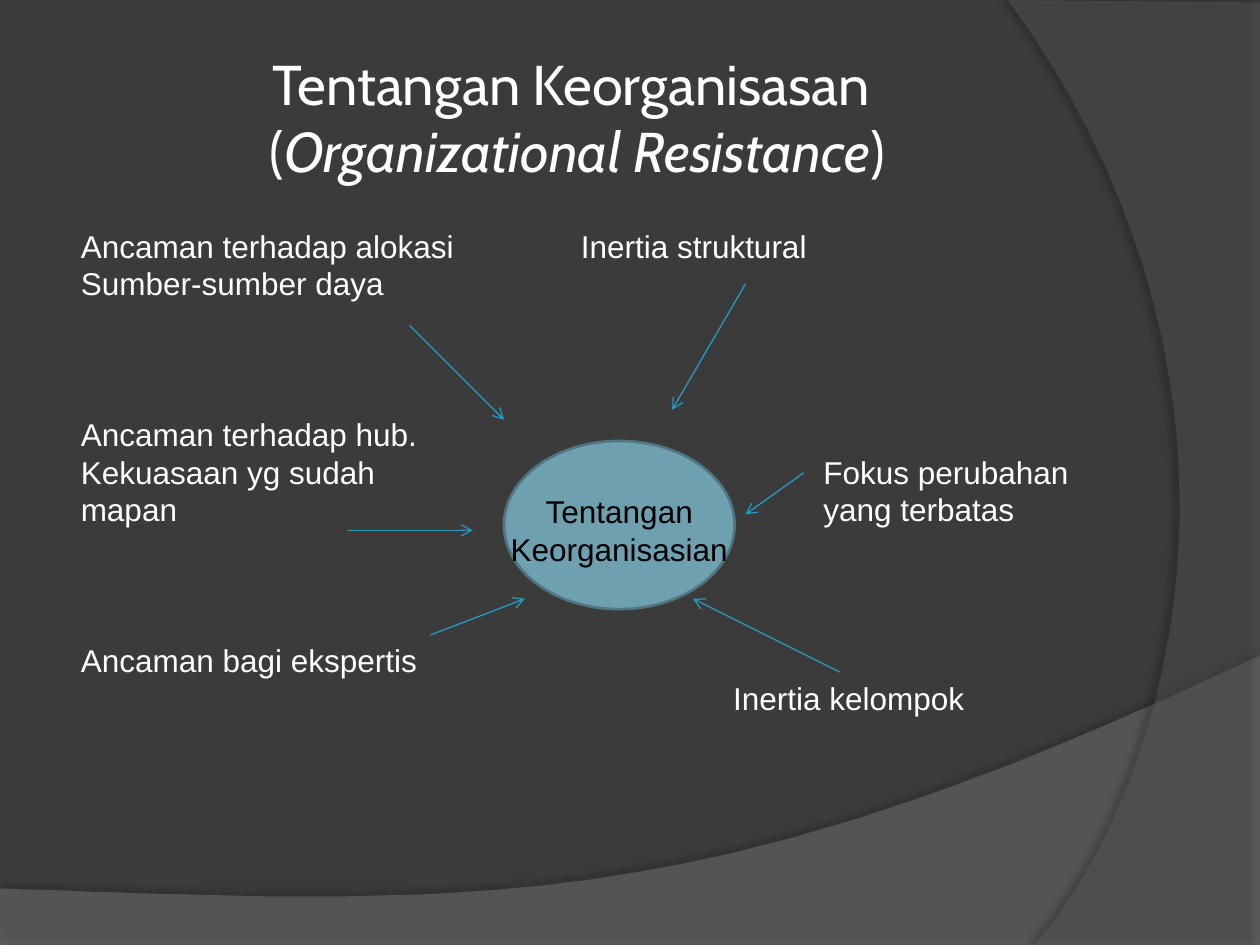
from typing import NamedTuple

from lxml import etree
from pptx import Presentation, util as u
from pptx.dml.color import RGBColor
from pptx.enum import shapes, text
from pptx.oxml import parse_xml
from pptx.oxml.ns import nsdecls, qn

Point = tuple[float, float]
WHITE, BLACK, ARROW_BLUE = "FFFFFF", "000000", "239BC2"
FIRST_ROW, ROW_HEIGHT = 4.57, 0.76  # cm


class Swoosh(NamedTuple):
    corners: list[Point]  # the curve leaves the last corner
    curve: list[Point]    # two control points and the end
    color: str
    opacity: int
    shadow_opacity: int
    shadow_distance: float
    shadow_angle: int


class Cause(NamedTuple):
    left: float
    row: int
    lines: list[str]
    arrow_from: Point
    arrow_to: Point


SWOOSHES = [
    Swoosh([(0, 17.91), (0, 19.05), (25.4, 19.05), (25.4, 13.21)],
           [(14.2, 18.52), (9.93, 18.26), (0, 17.91)], "7F7F7F", 45, 35, 3.5, 270),
    Swoosh([(25.4, 0.05), (25.4, 19.05), (20.85, 19.05)],
           [(23.75, 15.72), (25.86, 7.62), (20.32, 0)], "5E5E5E", 40, 45, 4, 180),
]

CAUSES = [
    Cause(1.63, 0, ["Ancaman terhadap alokasi", "Sumber-sumber daya"],
          (8.26, 6.56), (10.16, 8.46)),
    Cause(11.71, 0, ["Inertia struktural"], (15.03, 5.72), (13.55, 8.26)),
    Cause(1.63, 5, ["Ancaman terhadap hub.", "Kekuasaan yg sudah", "mapan"],
          (6.99, 10.69), (9.53, 10.69)),
    Cause(16.6, 6, ["Fokus perubahan", "yang terbatas"], (16.2, 9.53), (15.03, 10.37)),
    Cause(1.63, 11, ["Ancaman bagi ekspertis"], (8.68, 12.8), (10.58, 12.07)),
    Cause(14.78, 12, ["Inertia kelompok"], (16.93, 13.55), (13.97, 12.07)),
]


def rgb(color: str) -> RGBColor:
    return RGBColor.from_string(color)


def add_run(paragraph, words: str, *, size: float = 18, font: str = "Arial",
            color: str = WHITE, italic: bool = False) -> None:
    run = paragraph.add_run()
    run.text = words
    run.font.size, run.font.name = u.Pt(size), font
    run.font.color.rgb, run.font.italic = rgb(color), italic


def write_lines(frame, lines: list[str], *, align=text.PP_ALIGN.LEFT, **style) -> None:
    frame.word_wrap = False
    frame.margin_left = frame.margin_right = frame.margin_top = frame.margin_bottom = 0
    for number, line in enumerate(lines):
        paragraph = frame.add_paragraph() if number else frame.paragraphs[0]
        paragraph.alignment = align
        paragraph.line_spacing = u.Cm(ROW_HEIGHT)
        add_run(paragraph, line, **style)


def bezier(start: Point, curve: list[Point], steps: int = 60) -> list[Point]:
    a, b, c, d = start, *curve
    return [tuple((1 - t) ** 3 * a[i] + 3 * (1 - t) ** 2 * t * b[i]
                  + 3 * (1 - t) * t ** 2 * c[i] + t ** 3 * d[i] for i in (0, 1))
            for t in (step / steps for step in range(1, steps + 1))]


def draw_swoosh(slide, swoosh: Swoosh) -> None:
    outline = swoosh.corners + bezier(swoosh.corners[-1], swoosh.curve)
    points = [(x * 100, y * 100) for x, y in outline]
    builder = slide.shapes.build_freeform(*points[0], scale=u.Cm(0.01))
    builder.add_line_segments(points[1:], close=True)
    band = builder.convert_to_shape()
    band.fill.solid()
    band.fill.fore_color.rgb = rgb(swoosh.color)
    band.line.fill.background()
    properties = band.element.spPr
    fill_color = properties.find(qn("a:solidFill")).find(qn("a:srgbClr"))
    etree.SubElement(fill_color, qn("a:alpha"), val=str(swoosh.opacity * 1000))
    properties.append(parse_xml(
        f'<a:effectLst {nsdecls("a")}><a:outerShdw blurRad="{u.Pt(4)}" '
        f'dist="{u.Pt(swoosh.shadow_distance)}" dir="{swoosh.shadow_angle * 60000}" '
        f'algn="ctr" rotWithShape="0"><a:srgbClr val="{BLACK}">'
        f'<a:alpha val="{swoosh.shadow_opacity * 1000}"/></a:srgbClr>'
        '</a:outerShdw></a:effectLst>'))


def draw_arrow(slide, start: Point, end: Point) -> None:
    arrow = slide.shapes.add_connector(
        shapes.MSO_CONNECTOR.STRAIGHT, *(u.Cm(value) for value in (*start, *end)))
    arrow.line.color.rgb = rgb(ARROW_BLUE)
    arrow.line.width = u.Pt(0.75)
    etree.SubElement(arrow.line._get_or_add_ln(), qn("a:tailEnd"), type="arrow")
    etree.SubElement(arrow.element.spPr, qn("a:effectLst"))


def draw_cause(slide, cause: Cause) -> None:
    label = slide.shapes.add_textbox(
        u.Cm(cause.left), u.Cm(FIRST_ROW + cause.row * ROW_HEIGHT),
        u.Cm(8), u.Cm(len(cause.lines) * ROW_HEIGHT))
    write_lines(label.text_frame, cause.lines)
    draw_arrow(slide, cause.arrow_from, cause.arrow_to)


def draw_center(slide) -> None:
    oval = slide.shapes.add_shape(shapes.MSO_SHAPE.OVAL, u.Cm(10.16), u.Cm(8.89),
                                  u.Cm(4.65), u.Cm(3.39))
    oval.shadow.inherit = False
    oval.fill.solid()
    oval.fill.fore_color.rgb = rgb("6EA0B0")
    oval.line.color.rgb = rgb("517682")
    oval.line.width = u.Pt(1.5)
    write_lines(oval.text_frame, ["Tentangan", "Keorganisasian"],
                align=text.PP_ALIGN.CENTER, color=BLACK)
    oval.text_frame.vertical_anchor = text.MSO_ANCHOR.MIDDLE
    oval.text_frame.margin_top = u.Cm(0.2)


def write_title(slide) -> None:
    title = slide.shapes.title
    title.left, title.top = u.Cm(1.27), u.Cm(0.76)
    title.width, title.height = u.Cm(20.75), u.Cm(3.18)
    frame = title.text_frame
    frame.auto_size = text.MSO_AUTO_SIZE.NONE
    frame.vertical_anchor = text.MSO_ANCHOR.MIDDLE
    heading = frame.paragraphs[0]
    heading.alignment = text.PP_ALIGN.CENTER
    heading.line_spacing = 1.0
    style = {"size": 32, "font": "Cabin"}
    add_run(heading, "Tentangan Keorganisasan ", **style)
    heading.add_line_break()
    add_run(heading, "(", **style)
    add_run(heading, "Organizational Resistance", italic=True, **style)
    add_run(heading, ")", **style)


def main() -> None:
    deck = Presentation()
    deck.slide_width, deck.slide_height = u.Cm(25.4), u.Cm(19.05)
    slide = deck.slides.add_slide(deck.slide_layouts[5])

    # Dark backdrop with two translucent bands
    slide.background.fill.solid()
    slide.background.fill.fore_color.rgb = rgb("3B3B3B")
    for swoosh in SWOOSHES:
        draw_swoosh(slide, swoosh)

    # Title, central topic and its causes
    write_title(slide)
    draw_center(slide)
    for cause in CAUSES:
        draw_cause(slide, cause)
    deck.save("out.pptx")


if __name__ == "__main__":
    main()
